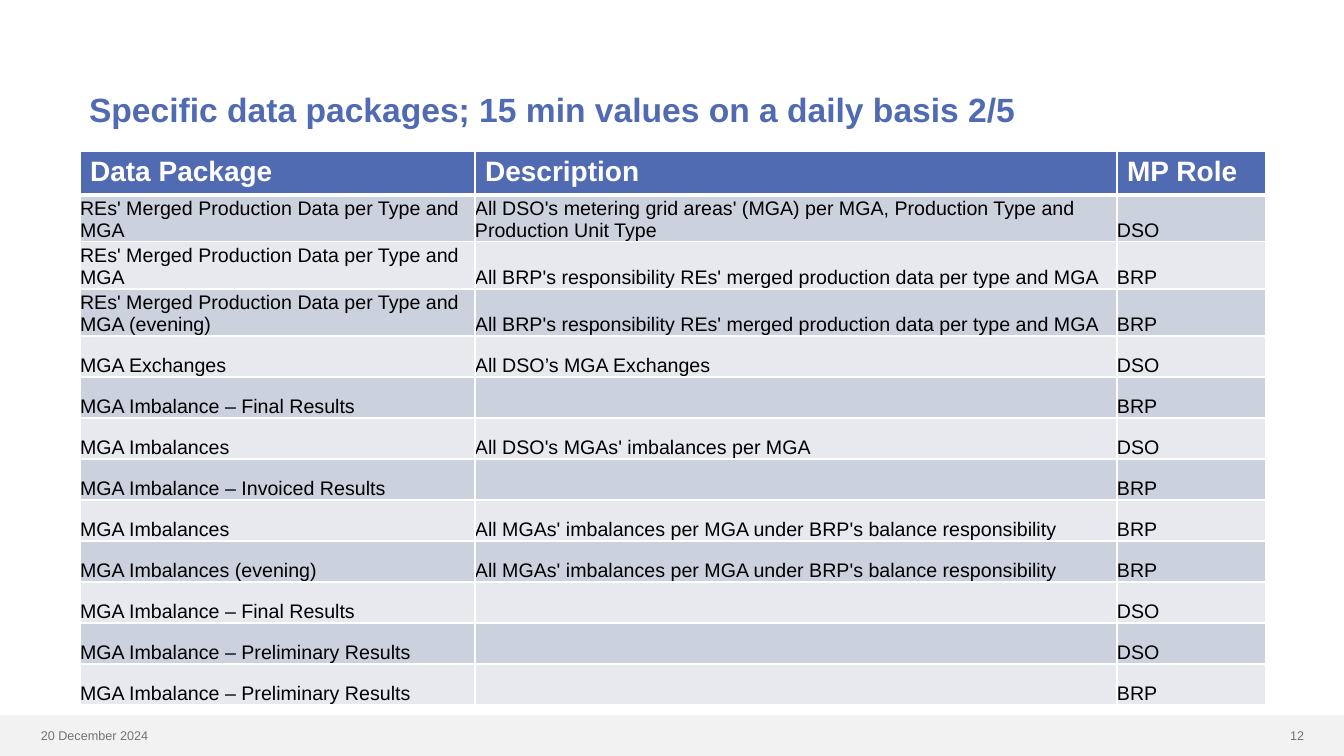
from pptx import Presentation
from pptx.dml.color import RGBColor
from pptx.enum.shapes import MSO_SHAPE as Shape
from pptx.enum.text import MSO_ANCHOR as Anchor, MSO_AUTO_SIZE as Fit, PP_ALIGN as Align
from pptx.oxml import parse_xml
from pptx.oxml.ns import nsdecls
from pptx.util import Pt

SCALE = 914400 / 100.8
BLUE, WHITE, GREY = "516BB3", "FFFFFF", "767171"
BANDS = "CCD1DE", "E7E9EF"
TITLE = "Specific data packages; 15 min values on a daily basis 2/5"
COLS = 395, 642, 149
ROW = 41
HEAD = "Data Package", "Description", "MP Role"

MERGED = "REs' Merged Production Data per Type and MGA"
DUTY = "All BRP's responsibility REs' merged production data per type and MGA"
UNDER = "All MGAs' imbalances per MGA under BRP's balance responsibility"
ROWS = [
    (MERGED, "All DSO's metering grid areas' (MGA) per MGA, "
             "Production Type and Production Unit Type", "DSO"),
    (MERGED, DUTY, "BRP"),
    (MERGED + " (evening)", DUTY, "BRP"),
    ("MGA Exchanges", "All DSO’s MGA Exchanges", "DSO"),
    ("MGA Imbalance – Final Results", "", "BRP"),
    ("MGA Imbalances", "All DSO's MGAs' imbalances per MGA", "DSO"),
    ("MGA Imbalance – Invoiced Results", "", "BRP"),
    ("MGA Imbalances", UNDER, "BRP"),
    ("MGA Imbalances (evening)", UNDER, "BRP"),
    ("MGA Imbalance – Final Results", "", "DSO"),
    ("MGA Imbalance – Preliminary Results", "", "DSO"),
    ("MGA Imbalance – Preliminary Results", "", "BRP"),
]


def px(n):
    return round(n * SCALE)


def box(*sides):
    return [px(n) for n in sides]


def color(code):
    return RGBColor.from_string(code)


def write(frame, text, size, code, bold=False, align=Align.LEFT):
    frame.word_wrap = True
    para = frame.paragraphs[0]
    para.text = text
    para.alignment = align
    look = {"name": "Arial", "size": Pt(size), "bold": bold}
    for font in [para.font] + [run.font for run in para.runs]:
        for key, value in look.items():
            setattr(font, key, value)
        font.color.rgb = color(code)
    return para


def add_title(slide):
    title = slide.shapes.title
    title.left, title.top, title.width, title.height = box(79, 39, 1182, 146)
    frame = title.text_frame
    frame.auto_size = Fit.NONE
    frame.vertical_anchor = Anchor.MIDDLE
    write(frame, TITLE, 24, BLUE, True).line_spacing = 0.9


def add_band(slide):
    band = slide.shapes.add_shape(Shape.RECTANGLE, *box(0, 715, 1344, 41))
    band.shadow.inherit = False
    band.fill.solid()
    band.fill.fore_color.rgb = color("F2F2F2")
    band.line.fill.background()


def add_note(slide, text, left, width, align):
    note = slide.shapes.add_textbox(*box(left, 723, width, 25))
    write(note.text_frame, text, 9, GREY, align=align)


def edge(cell, top, bottom):
    """Draw white cell borders; top and bottom are widths in points."""
    props = cell._tc.get_or_add_tcPr()
    for side, width in {"L": 1, "R": 1, "T": top, "B": bottom}.items():
        props.append(parse_xml(
            f'<a:ln{side} {nsdecls("a")} w="{Pt(width)}"><a:solidFill>'
            f'<a:srgbClr val="{WHITE}"/></a:solidFill></a:ln{side}>'))


def fill_cell(cell, text, row):
    edge(cell, 3 if row == 1 else 1, 3 if row == 0 else 1)
    cell.fill.solid()
    if row == 0:
        cell.fill.fore_color.rgb = color(BLUE)
        write(cell.text_frame, text, 20, WHITE, True)
        return
    cell.fill.fore_color.rgb = color(BANDS[(row - 1) % 2])
    for side in ("left", "top", "right", "bottom"):
        setattr(cell, f"margin_{side}", 0)
    cell.vertical_anchor = Anchor.BOTTOM
    write(cell.text_frame, text, 14, "000000")


def add_grid(slide):
    data = [HEAD] + ROWS
    table = slide.shapes.add_table(
        len(data), len(COLS), *box(80, 151, sum(COLS), ROW * len(data))).table
    for col, width in zip(table.columns, COLS):
        col.width = px(width)
    for r, texts in enumerate(data):
        table.rows[r].height = px(ROW)
        for c, text in enumerate(texts):
            fill_cell(table.cell(r, c), text, r)


def main():
    deck = Presentation()
    deck.slide_width, deck.slide_height = box(1344, 756)
    slide = deck.slides.add_slide(deck.slide_layouts[5])
    add_band(slide)
    add_note(slide, "12", 1231, 83, Align.RIGHT)
    add_note(slide, "20 December 2024", 31, 214, Align.LEFT)
    add_title(slide)
    add_grid(slide)
    deck.save("out.pptx")


if __name__ == "__main__":
    main()
